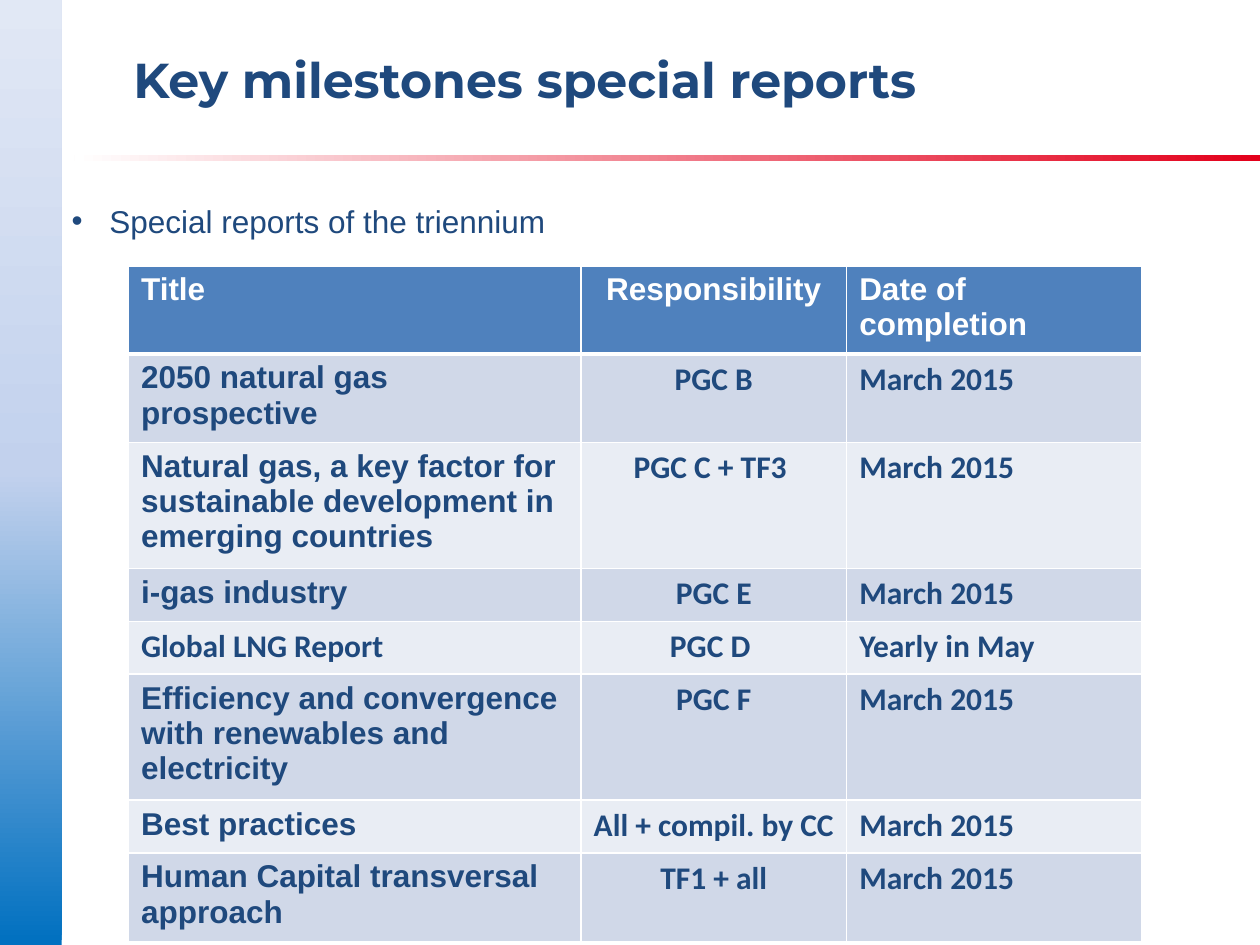
import pptx
import pptx.util
import pptx.dml.color
import pptx.enum.shapes
import pptx.enum.text
import pptx.oxml.ns
from lxml import etree

Inches, Pt = pptx.util.Inches, pptx.util.Pt
Align, Anchor = pptx.enum.text.PP_ALIGN, pptx.enum.text.MSO_ANCHOR
NAVY, BLUE, WHITE = "1F497D", "4F81BD", "FFFFFF"
BANDS = ("D0D8E8", "E9EDF4")

HEAD = ("Title", "Responsibility", "Date of completion")
REPORTS = [
    ("2050 natural gas prospective", "PGC B", "March 2015"),
    ("Natural gas, a key factor for sustainable development in emerging countries",
     "PGC C + TF3 ", "March 2015"),
    ("i-gas industry", "PGC E", "March 2015"),
    ("Global LNG Report", "PGC D ", "Yearly in May"),
    ("Efficiency and convergence with renewables and electricity", "PGC F", "March 2015"),
    ("Best practices", "All + compil. by CC", "March 2015"),
    ("Human Capital transversal approach", "TF1 + all", "March 2015"),
]


def color(code):
    return pptx.dml.color.RGBColor.from_string(code)


def add(node, tag, **attrs):
    """Append a DrawingML child with the given attributes."""
    kid = etree.SubElement(node, pptx.oxml.ns.qn(tag))
    for key, val in attrs.items():
        kid.set(key, str(val))
    return kid


class Deck:
    """Holds the text style and the current slide."""

    base = {"name": "Arial", "size": Pt(18), "bold": False}

    def __init__(self, slide):
        self.slide = slide

    def style(self, para, text, tint=NAVY, **look):
        """Put styled text in a paragraph."""
        para.text = text
        font = para.runs[0].font
        for key, val in {**self.base, **look}.items():
            setattr(font, key, val)
        font.color.rgb = color(tint)

    def fade(self, box, stops, angle):
        """Draw a borderless bar; the angle runs clockwise in degrees."""
        bar = self.slide.shapes.add_shape(
            pptx.enum.shapes.MSO_SHAPE.RECTANGLE, *map(Inches, box))
        bar.shadow.inherit = False
        bar.line.fill.background()
        bar.fill.gradient()
        grad = bar._element.spPr.find(pptx.oxml.ns.qn("a:gradFill"))
        for kid in list(grad):
            grad.remove(kid)
        group = add(grad, "a:gsLst")
        for spot, code in stops:
            stop = add(group, "a:gs", pos=spot * 1000)
            add(stop, "a:srgbClr", val=code)
        add(grad, "a:lin", ang=angle * 60000, scaled=0)

    def label(self, box, text, anchor=Anchor.TOP, bullet=False, **look):
        frame = self.slide.shapes.add_textbox(*map(Inches, box)).text_frame
        frame.word_wrap = True
        frame.vertical_anchor = anchor
        para = frame.paragraphs[0]
        if bullet:
            props = para._p.get_or_add_pPr()
            props.set("marL", str(Inches(0.3)))
            props.set("indent", str(-Inches(0.3)))
            add(props, "a:buFont", typeface="Arial")
            add(props, "a:buChar", char="•")
        self.style(para, text, **look)

    def cell(self, cell, text, fill, edges, align, **look):
        """Fill one table cell; edges maps each side to a width in points."""
        props = cell._tc.get_or_add_tcPr()
        for side, width in edges.items():
            line = add(props, f"a:ln{side}", w=int(Pt(width)))
            add(add(line, "a:solidFill"), "a:srgbClr", val=WHITE)
        cell.fill.solid()
        cell.fill.fore_color.rgb = color(fill)
        para = cell.text_frame.paragraphs[0]
        para.alignment = align
        self.style(para, text, bold=True, **look)

    def table(self, box, widths, rows):
        table = self.slide.shapes.add_table(
            len(rows), len(widths), *map(Inches, box)).table
        for col, width in zip(table.columns, widths):
            col.width = Inches(width)
        for r, row in enumerate(rows):
            edges = {"L": 1, "R": 1, "T": 3 if r == 1 else 1, "B": 1 if r else 3}
            fill = BANDS[(r - 1) % 2] if r else BLUE
            for c, text in enumerate(row):
                plain = r and (c or text == "Global LNG Report")
                self.cell(table.cell(r, c), text, fill, edges,
                          Align.CENTER if c == 1 else Align.LEFT,
                          tint=NAVY if r else WHITE,
                          name="Calibri" if plain else "Arial")


def main():
    prs = pptx.Presentation()
    prs.slide_width, prs.slide_height = Inches(10), Inches(7.5)
    deck = Deck(prs.slides.add_slide(prs.slide_layouts[6]))
    deck.fade((-0.04, 0, 0.53, 7.5),
              [(0, "0070C0"), (50, "C2D1ED"), (100, "E1E8F5")], 270)
    deck.fade((0.59, 1.23, 9.41, 0.05), [(0, "E3001B"), (100, WHITE)], 180)
    deck.label((0.96, 0, 7.02, 1.25), "Key milestones special reports",
               Anchor.MIDDLE, name="Montserrat", size=Pt(28), bold=True)
    deck.label((0.47, 1.55, 9.53, 1.01), "Special reports of the triennium", bullet=True)
    deck.table((1.02, 2.11, 8.04, 3.36), (3.59, 2.11, 2.34), [HEAD, *REPORTS])
    prs.save("out.pptx")


if __name__ == "__main__":
    main()
